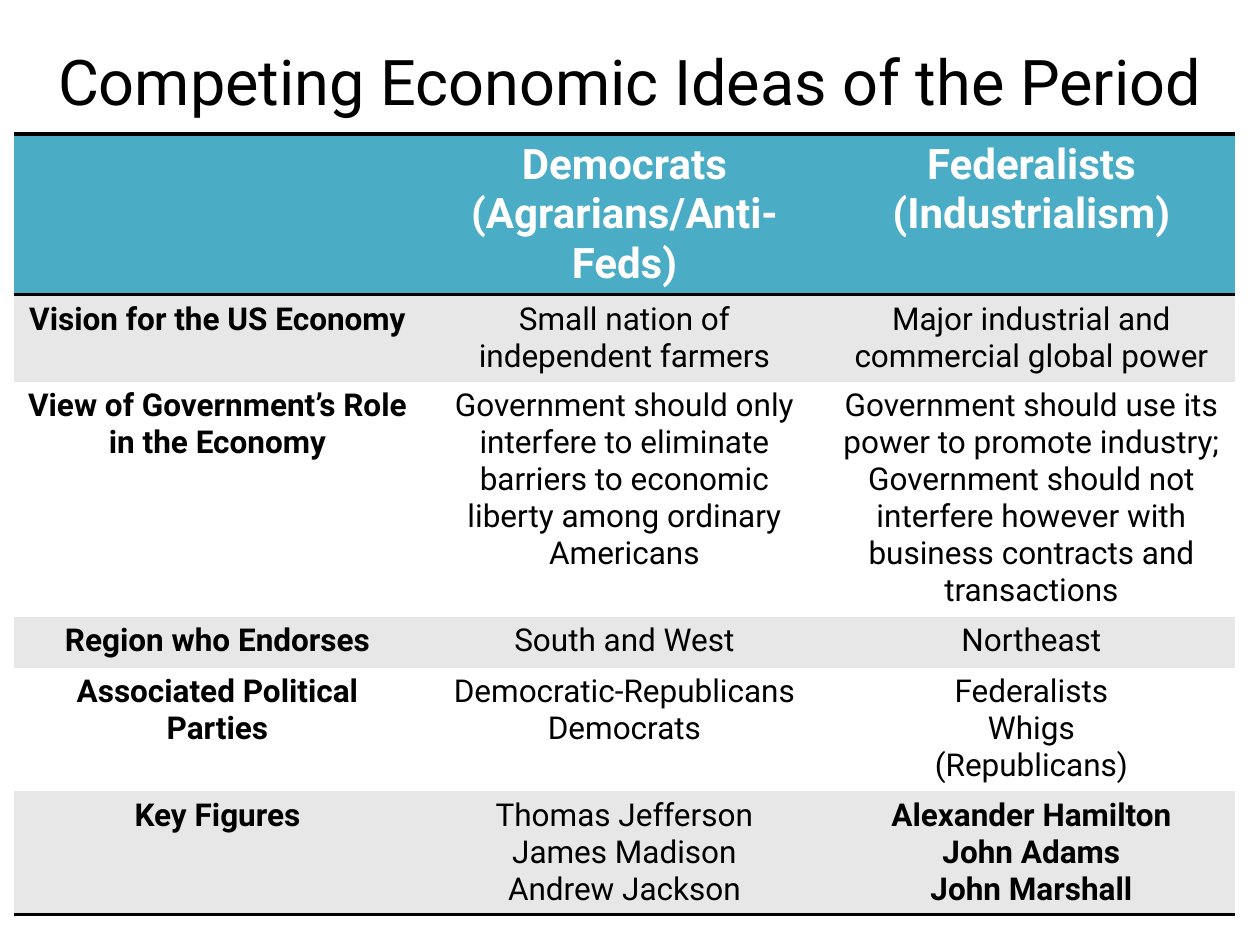
from lxml import etree
from pptx import Presentation
from pptx import util as u
from pptx.dml.color import RGBColor
from pptx.enum import text
from pptx.oxml import ns

PX = 914400 / 126
FONT = "Roboto"
BLACK = RGBColor(0x00, 0x00, 0x00)
WHITE = RGBColor(0xFF, 0xFF, 0xFF)
TEAL = RGBColor(0x4B, 0xAC, 0xC6)
GRAY = RGBColor(0xE7, 0xE7, 0xE7)
NO_STYLE = "{2D5ABB26-0587-4C30-8999-92F81FD0307C}"

# Each row: height in px, then the paragraphs of its three cells
ROWS = [
    (161, [[], ["Democrats (Agrarians/Anti-Feds)"], ["Federalists (Industrialism)"]]),
    (86, [["Vision for the US Economy"],
          ["Small nation of independent farmers"],
          ["Major industrial and commercial global power"]]),
    (235, [["View of Government’s Role in the Economy"],
           ["Government should only interfere to eliminate barriers to "
            "economic liberty among ordinary Americans"],
           ["Government should use its power to promote industry; Government "
            "should not interfere however with business contracts and transactions"]]),
    (51, [["Region who Endorses"], ["South and West"], ["Northeast"]]),
    (123, [["Associated Political Parties"],
           ["Democratic-Republicans", "Democrats"],
           ["Federalists", "Whigs", "(Republicans)"]]),
    (123, [["Key Figures"],
           ["Thomas Jefferson", "James Madison", "Andrew Jackson"],
           ["Alexander Hamilton", "John Adams", "John Marshall"]]),
]
LAST = len(ROWS) - 1


def px(length):
    return u.Emu(round(length * PX))


def write(para, words, size, color, bold=False):
    para.alignment = text.PP_ALIGN.CENTER
    span = para.add_run()
    span.text = words
    span.font.name = FONT
    span.font.size = u.Pt(size)
    span.font.bold = bold
    span.font.color.rgb = color


deck = Presentation()
deck.slide_width, deck.slide_height = px(1260), px(945)
page = deck.slides.add_slide(deck.slide_layouts[5])

# Title
title = page.shapes.title
title.left, title.top, title.width, title.height = px(0), px(1), px(1260), px(158)
title.text_frame.vertical_anchor = text.MSO_ANCHOR.MIDDLE
write(title.text_frame.paragraphs[0], "Competing Economic Ideas of the Period", 36, BLACK)

# Table without a built-in style
heights = [height for height, cells in ROWS]
frame = page.shapes.add_table(len(ROWS), 3, px(14), px(134), px(1221), px(sum(heights)))
table = frame.table
table.first_row = table.horz_banding = False
table._tbl.tblPr.find(ns.qn("a:tableStyleId")).text = NO_STYLE
for column in table.columns:
    column.width = px(407)

# Cells: teal header, then alternating bands
for r, (height, cells) in enumerate(ROWS):
    table.rows[r].height = px(height)
    for c, lines in enumerate(cells):
        cell = table.cell(r, c)
        cell.fill.solid()
        cell.fill.fore_color.rgb = TEAL if r == 0 else GRAY if r % 2 else WHITE
        bold = r == 0 or c == 0 or (r == LAST and c == 2)
        for i, line in enumerate(lines):
            para = cell.text_frame.add_paragraph() if i else cell.text_frame.paragraphs[0]
            write(para, line, 18 if r else 24, BLACK if r else WHITE, bold)

        # Rules around the header and under the last row
        edges = {0: ["lnT", "lnB"], LAST: ["lnB"]}.get(r, [])
        for position, edge in enumerate(edges):
            rule = etree.Element(ns.qn("a:" + edge), w=str(u.Pt(2)))
            paint = etree.SubElement(rule, ns.qn("a:solidFill"))
            etree.SubElement(paint, ns.qn("a:srgbClr"), val=str(BLACK))
            cell._tc.get_or_add_tcPr().insert(position, rule)

deck.save("out.pptx")
